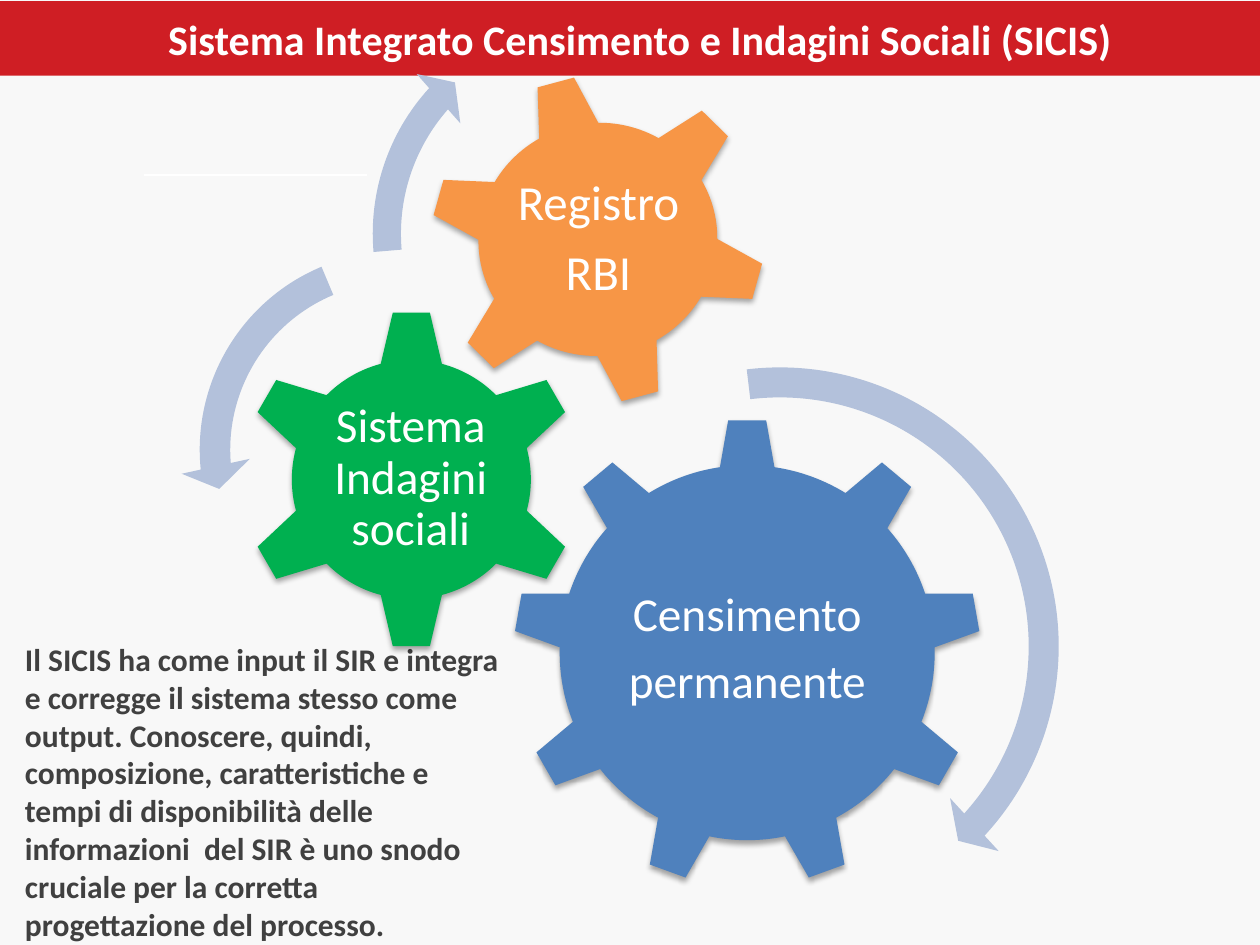
from dataclasses import dataclass

from lxml.etree import SubElement
from pptx import Presentation
from pptx.dml.color import RGBColor
from pptx.enum.shapes import MSO_CONNECTOR as Connector, MSO_SHAPE as Preset
from pptx.enum.text import MSO_ANCHOR as Anchor, MSO_AUTO_SIZE as AutoSize, PP_ALIGN as Align
from pptx.oxml.ns import qn
from pptx.util import Inches, Pt

COLORS = {
    "background": "F8F8F8",
    "banner": "CF1E24",
    "census": "4F81BD",
    "surveys": "00B050",
    "register": "F79646",
    "arrow": "B3C1DB",
    "white": "FFFFFF",
    "body": "404040",
    "shadow": "000000",
}
FONT = "Calibri"
TITLE = "Sistema Integrato Censimento e Indagini Sociali (SICIS)"
BODY = (
    "Il SICIS ha come input il SIR e integra e corregge il sistema stesso come output. "
    "Conoscere, quindi, composizione, caratteristiche e tempi di disponibilità delle "
    "informazioni  del SIR è uno snodo cruciale per la corretta progettazione del processo."
)

Box = tuple[float, float, float, float]


@dataclass
class Gear:
    preset: Preset
    box: Box
    label_box: Box
    lines: tuple[str, ...]
    color: str
    size: int = 27
    rotation: int = 0


@dataclass
class Arrow:
    preset: Preset
    box: Box
    adjustments: tuple[float, ...]


GEARS = [
    Gear(Preset.GEAR_9, (4.07, 3.32, 3.72, 3.72), (4.82, 4.2, 2.22, 1.91),
         ("Censimento", "permanente"), "census"),
    Gear(Preset.GEAR_6, (1.91, 2.45, 2.71, 2.71), (2.59, 3.13, 1.34, 1.34),
         ("Sistema Indagini sociali",), "surveys"),
    Gear(Preset.GEAR_6, (3.4, 0.58, 2.69, 2.64), (4, 1.16, 1.5, 1.49),
         ("Registro", "RBI"), "register", 28, 345),
]
ARROWS = [
    Arrow(Preset.CIRCULAR_ARROW, (3.81, 2.75, 4.76, 4.76), (0.05, 2.99, 25.5, 157.91, 0.06)),
    Arrow(Preset.LEFT_CIRCULAR_ARROW, (1.43, 1.84, 3.46, 3.46), (0.07, 4.3, 104.89, 148.38, 0.08)),
    Arrow(Preset.CIRCULAR_ARROW, (2.81, -0.01, 3.73, 3.73), (0.06, 3.94, 133.14, 105.08, 0.07)),
]


def rgb(name: str) -> RGBColor:
    return RGBColor.from_string(COLORS[name])


def add_shape(slide, preset: Preset, box: Box, color: str):
    shape = slide.shapes.add_shape(preset, *map(Inches, box))
    shape.shadow.inherit = False
    shape.fill.solid()
    shape.fill.fore_color.rgb = rgb(color)
    shape.line.fill.background()
    return shape


def style(paragraph, size: int, color: str, bold: bool = False) -> None:
    font = paragraph.font
    font.name, font.size, font.bold = FONT, Pt(size), bold
    font.color.rgb = rgb(color)


def set_margins(frame, margin: float) -> None:
    frame.margin_left = frame.margin_right = Inches(margin)
    frame.margin_top = frame.margin_bottom = Inches(margin)


def add_shadow(shape) -> None:
    effects = shape._element.spPr.find(qn("a:effectLst"))
    shadow = SubElement(effects, qn("a:outerShdw"), blurRad=str(Pt(3.1)), dist=str(Pt(1.8)),
                        dir="5400000", rotWithShape="0")
    color = SubElement(shadow, qn("a:srgbClr"), val=COLORS["shadow"])
    SubElement(color, qn("a:alpha"), val="35000")


def add_gear(slide, gear: Gear) -> None:
    shape = add_shape(slide, gear.preset, gear.box, gear.color)
    shape.rotation = gear.rotation
    add_shadow(shape)
    frame = slide.shapes.add_textbox(*map(Inches, gear.label_box)).text_frame
    frame.word_wrap = True
    frame.vertical_anchor = Anchor.MIDDLE
    set_margins(frame, 0.04)
    frame.text = "\n".join(gear.lines)
    for paragraph in frame.paragraphs:
        paragraph.alignment = Align.CENTER
        paragraph.line_spacing = 0.9
        paragraph.space_after = Pt(0.35 * gear.size)
        style(paragraph, gear.size, "white")


def add_arrow(slide, arrow: Arrow) -> None:
    shape = add_shape(slide, arrow.preset, arrow.box, "arrow")
    for index, value in enumerate(arrow.adjustments):
        shape.adjustments[index] = value


def add_rule(slide) -> None:
    rule = slide.shapes.add_connector(
        Connector.STRAIGHT, Inches(1.14), Inches(1.39), Inches(2.91), Inches(1.39))
    rule.line.color.rgb = rgb("white")
    rule.line.width = Pt(0.75)
    SubElement(rule._element.spPr, qn("a:effectLst"))


def add_body(slide) -> None:
    frame = slide.shapes.add_textbox(
        Inches(0.1), Inches(5.03), Inches(3.97), Inches(3.31)).text_frame
    frame.word_wrap = True
    frame.auto_size = AutoSize.SHAPE_TO_FIT_TEXT
    frame.text = BODY
    style(frame.paragraphs[0], 18, "body", bold=True)


def add_banner(slide) -> None:
    frame = add_shape(slide, Preset.RECTANGLE, (0, 0.01, 10, 0.59), "banner").text_frame
    set_margins(frame, 0)
    frame.margin_left = Inches(0.16)
    frame.vertical_anchor = Anchor.MIDDLE
    frame.text = TITLE
    paragraph = frame.paragraphs[0]
    paragraph.alignment = Align.CENTER
    style(paragraph, 24, "white", bold=True)


def main() -> None:
    presentation = Presentation()
    presentation.slide_width, presentation.slide_height = Inches(10), Inches(7.5)
    slide = presentation.slides.add_slide(presentation.slide_layouts[6])
    slide.background.fill.solid()
    slide.background.fill.fore_color.rgb = rgb("background")
    add_rule(slide)
    add_body(slide)
    add_banner(slide)
    for gear in GEARS:
        add_gear(slide, gear)
    for arrow in ARROWS:
        add_arrow(slide, arrow)
    presentation.save("out.pptx")


if __name__ == "__main__":
    main()
